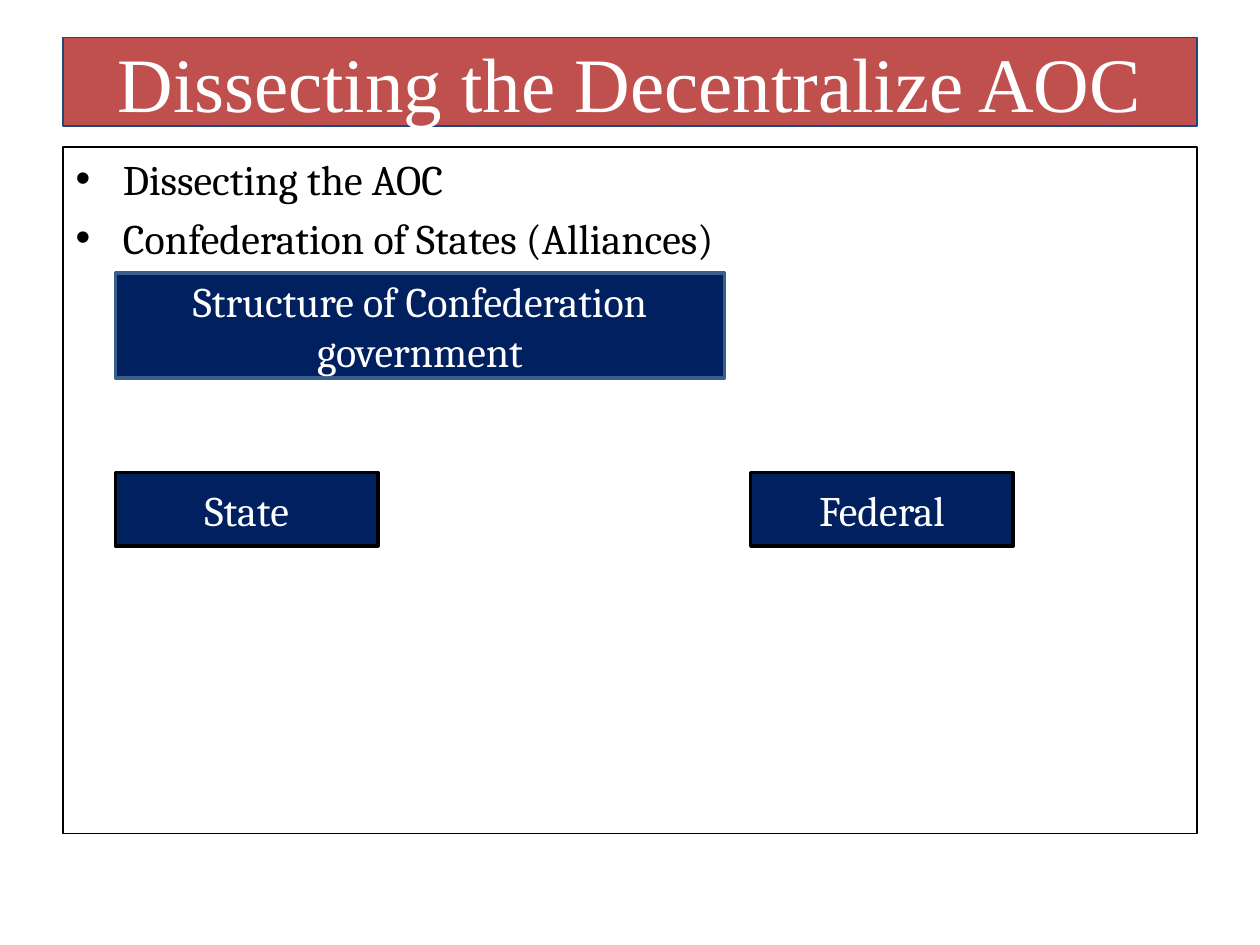
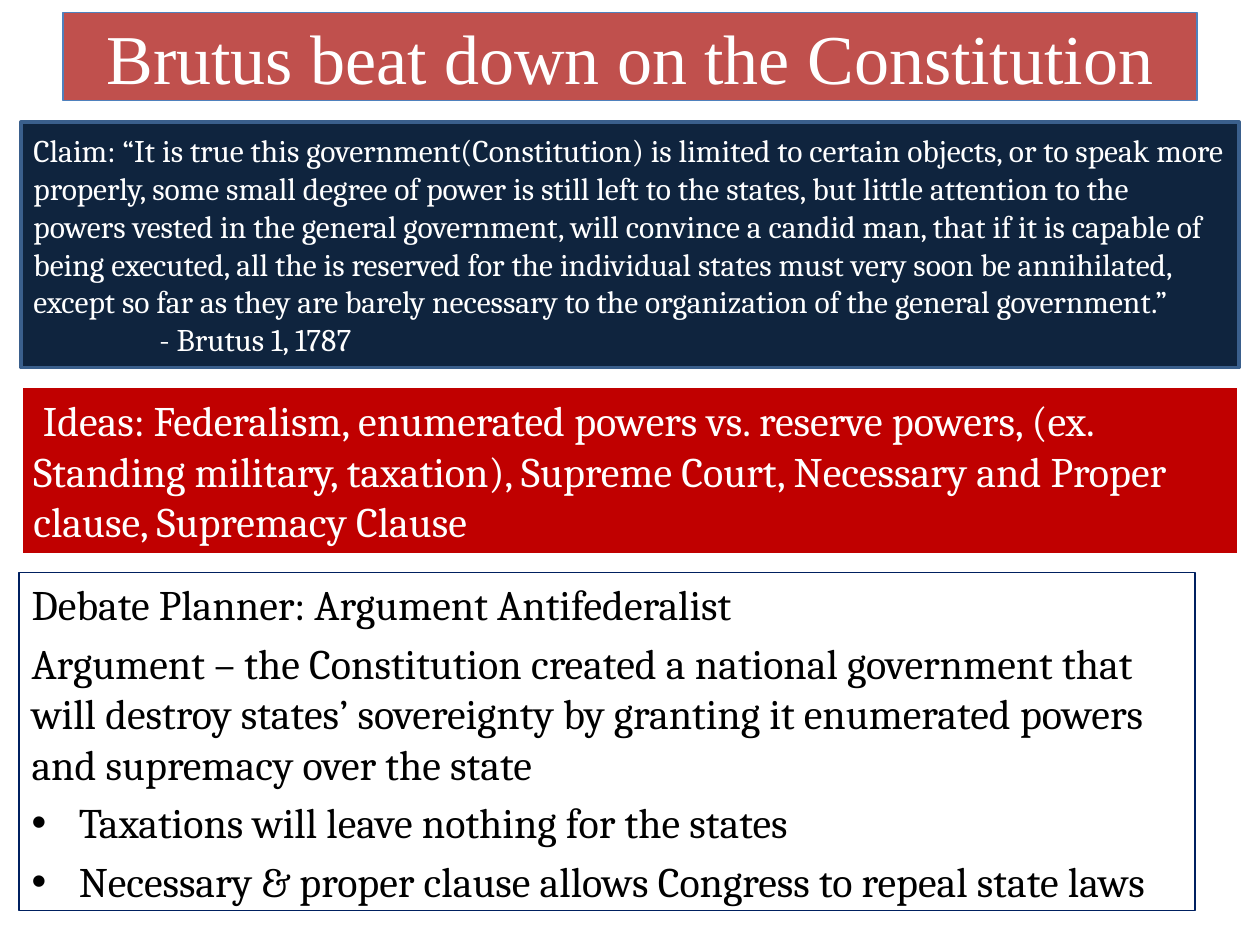
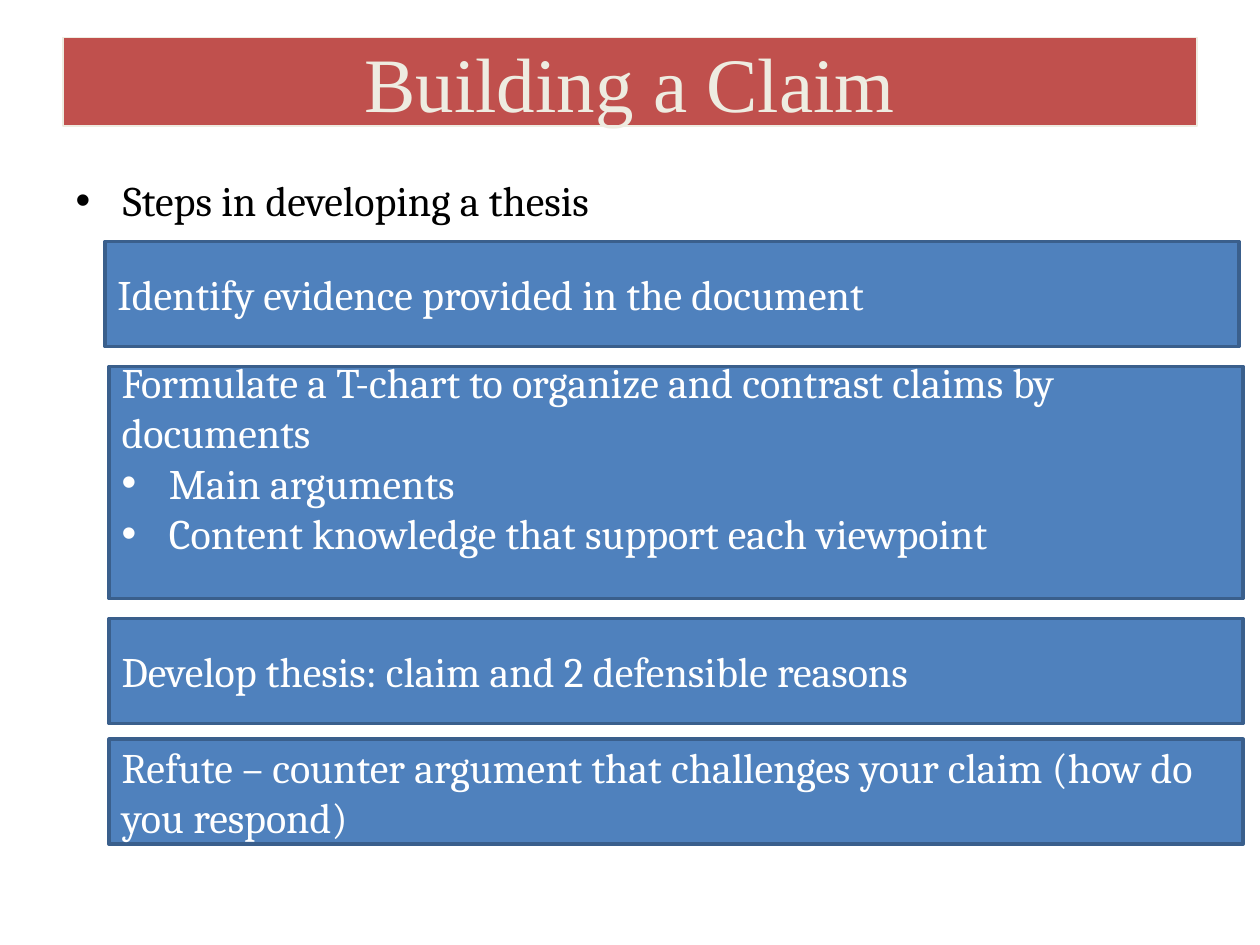
"""Build three civics slides on the Articles, Brutus and claims."""
import dataclasses
import typing

import lxml.etree
import pptx
import pptx.dml.color
import pptx.enum.shapes
import pptx.enum.text
import pptx.oxml.ns
import pptx.util

COLS, ROWS = 120, 90
WIDTH, HEIGHT = pptx.util.Inches(10), pptx.util.Inches(7.5)
ALIGN = pptx.enum.text.PP_ALIGN
ANCHOR = pptx.enum.text.MSO_ANCHOR


@dataclasses.dataclass(frozen=True)
class Theme:
    white: str = "FFFFFF"
    black: str = "000000"
    cream: str = "EEECE1"
    brick: str = "C0504D"
    red: str = "C00000"
    blue: str = "4F81BD"
    edge: str = "3A5F8C"
    slate: str = "1F497D"
    navy: str = "002060"
    night: str = "0F243E"
    head: str = "Times New Roman"
    text: str = "Cambria"
    large: int = 44
    big: int = 40
    base: int = 24
    small: int = 18
    thin: float = 0.75
    thick: float = 2
    gap: float = 4.8
    hang: float = 4.5


THEME = Theme()


class Cell(typing.NamedTuple):
    col: float
    row: float
    wide: float
    high: float


@dataclasses.dataclass(frozen=True)
class Line:
    text: str
    dot: bool = False
    left: float = 0
    first: float = 0


@dataclasses.dataclass(frozen=True)
class Box:
    cell: Cell
    lines: list[Line]
    fill: str = THEME.blue
    edge: str = THEME.edge
    size: int = THEME.base
    align: ALIGN = ALIGN.LEFT
    foot: float = 0.6


@dataclasses.dataclass(frozen=True)
class Head:
    text: str
    edge: str
    row: float = 3.6
    size: int = THEME.large
    color: str = THEME.white


@dataclasses.dataclass(frozen=True)
class Body:
    cell: Cell
    lines: list[Line]
    edge: str | None = None


@dataclasses.dataclass(frozen=True)
class Page:
    head: Head
    body: Body
    boxes: list[Box]


def across(cols: float) -> int:
    return round(WIDTH * cols / COLS)


def down(rows: float) -> int:
    return round(HEIGHT * rows / ROWS)


def tint(code: str) -> pptx.dml.color.RGBColor:
    return pptx.dml.color.RGBColor.from_string(code)


def mark(para, line: Line) -> None:
    props = para._p.get_or_add_pPr()
    left, first = (THEME.hang, -THEME.hang) if line.dot else (line.left, line.first)
    props.set("marL", str(across(left)))
    props.set("indent", str(across(first)))
    name = pptx.oxml.ns.qn
    if line.dot:
        lxml.etree.SubElement(props, name("a:buFont")).set("typeface", "Arial")
        lxml.etree.SubElement(props, name("a:buChar")).set("char", "•")
    else:
        lxml.etree.SubElement(props, name("a:buNone"))


def write(frame, lines: list[Line], *, size: int = THEME.base, font: str = THEME.text,
          color: str = THEME.white, align: ALIGN = ALIGN.LEFT,
          anchor: ANCHOR = ANCHOR.MIDDLE, gap: float = 0) -> None:
    frame.word_wrap = True
    frame.auto_size = pptx.enum.text.MSO_AUTO_SIZE.NONE
    frame.vertical_anchor = anchor
    for rank, line in enumerate(lines):
        para = frame.add_paragraph() if rank else frame.paragraphs[0]
        mark(para, line)
        para.alignment = align
        para.space_before = pptx.util.Pt(gap if rank else 0)
        run = para.add_run()
        run.text = line.text
        run.font.size = pptx.util.Pt(size)
        run.font.name = font
        run.font.color.rgb = tint(color)


def place(shape, cell: Cell) -> None:
    shape.left, shape.top = across(cell.col), down(cell.row)
    shape.width, shape.height = across(cell.wide), down(cell.high)


def paint(shape, fill: str, edge: str, width: float) -> None:
    shape.fill.solid()
    shape.fill.fore_color.rgb = tint(fill)
    shape.line.color.rgb = tint(edge)
    shape.line.width = pptx.util.Pt(width)


def draw_head(slide, head: Head) -> None:
    shape = slide.shapes.title
    place(shape, Cell(6, head.row, 108, 8.4))
    paint(shape, THEME.brick, head.edge, THEME.thin)
    write(shape.text_frame, [Line(head.text)], size=head.size, font=THEME.head,
          color=head.color, align=ALIGN.CENTER)


def draw_body(slide, body: Body) -> None:
    shape = slide.placeholders[1]
    place(shape, body.cell)
    if body.edge:
        paint(shape, THEME.white, body.edge, THEME.thin)
    write(shape.text_frame, body.lines, color=THEME.black, anchor=ANCHOR.TOP, gap=THEME.gap)


def draw_box(slide, box: Box) -> None:
    shape = slide.shapes.add_shape(pptx.enum.shapes.MSO_SHAPE.RECTANGLE, 0, 0, 0, 0)
    place(shape, box.cell)
    shape.shadow.inherit = False
    paint(shape, box.fill, box.edge, THEME.thick)
    shape.text_frame.margin_bottom = down(box.foot)
    write(shape.text_frame, box.lines, size=box.size, align=box.align)


def level(text: str, col: float) -> Box:
    return Box(Cell(col, 45, 25, 7), [Line(text)], THEME.navy, THEME.black,
               align=ALIGN.CENTER)


PAGES = [
    Page(
        Head("Dissecting the Decentralize AOC", THEME.slate),
        Body(Cell(6, 14, 108, 65.4), [
            Line("Dissecting the AOC", dot=True),
            Line("Confederation of States (Alliances)", dot=True),
        ], THEME.black),
        [
            level("State", 11),
            level("Federal", 71.5),
            Box(Cell(11, 26, 58, 10), [Line("Structure of Confederation government")],
                THEME.navy, align=ALIGN.CENTER),
        ],
    ),
    Page(
        Head("Brutus beat down on the Constitution", THEME.blue, 1.2, THEME.big),
        Body(Cell(1.8, 54.5, 112, 32.2), [
            Line("Debate Planner: Argument Antifederalist"),
            Line("Argument – the Constitution created a national government that will "
                 "destroy states’ sovereignty by granting it enumerated powers and "
                 "supremacy over the state"),
            Line("Taxations will leave nothing for the states", dot=True),
            Line("Necessary & proper clause allows Congress to repeal state laws", dot=True),
        ], THEME.navy),
        [
            Box(Cell(2, 11.6, 116, 23.4), [
                Line("Claim: “It is true this government(Constitution) is limited to certain "
                     "objects, or to speak more properly, some small degree of power is still "
                     "left to the states, but little attention to the powers vested in the "
                     "general government, will convince a candid man, that if it is capable of "
                     "being executed, all the is reserved for the individual states must very "
                     "soon be annihilated, except so far as they are barely necessary to the "
                     "organization of the general government.”"),
                Line("- Brutus 1, 1787", left=12),
            ], THEME.night, size=THEME.small),
            Box(Cell(2, 36.8, 116, 16), [
                Line("Ideas: Federalism, enumerated powers vs. reserve powers, (ex. Standing "
                     "military, taxation), Supreme Court, Necessary and Proper clause, "
                     "Supremacy Clause", first=0.9),
            ], THEME.red, THEME.white),
        ],
    ),
    Page(
        Head("Building a Claim", THEME.cream, color=THEME.cream),
        Body(Cell(6, 16, 108, 64.4), [Line("Steps in developing a thesis", dot=True)]),
        [
            Box(Cell(10, 23, 108, 10), [Line("Identify evidence provided in the document")]),
            Box(Cell(10.4, 34.9, 108, 22.1), [
                Line("Formulate a T-chart to organize and contrast claims by documents"),
                Line("Main arguments", dot=True),
                Line("Content knowledge that support each viewpoint", dot=True),
            ], foot=5.4),
            Box(Cell(10.4, 58.9, 108, 10),
                [Line("Develop thesis: claim and 2 defensible reasons")]),
            Box(Cell(10.4, 70.4, 108, 10),
                [Line("Refute – counter argument that challenges your claim (how do you "
                      "respond)")]),
        ],
    ),
]


def main() -> None:
    deck = pptx.Presentation()
    deck.slide_width, deck.slide_height = WIDTH, HEIGHT
    for page in PAGES:
        slide = deck.slides.add_slide(deck.slide_layouts[1])
        draw_head(slide, page.head)
        draw_body(slide, page.body)
        for box in page.boxes:
            draw_box(slide, box)
    deck.save("out.pptx")


if __name__ == "__main__":
    main()
